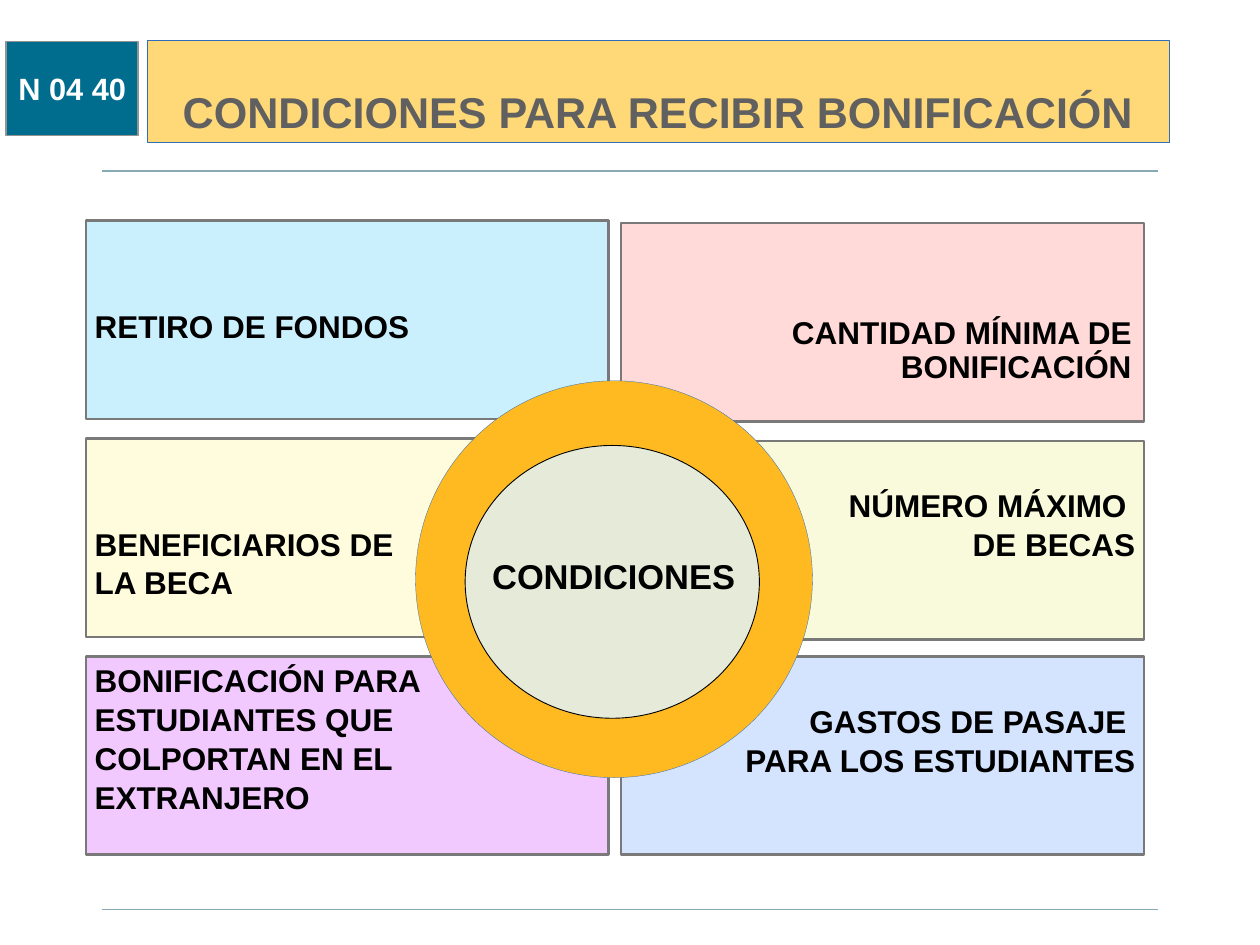
from lxml import etree
from pptx import Presentation
from pptx.dml.color import RGBColor
from pptx.enum.shapes import MSO_CONNECTOR, MSO_SHAPE
from pptx.enum.text import MSO_ANCHOR, PP_ALIGN
from pptx.oxml.ns import qn
from pptx.util import Inches, Pt

RECT, OVAL, STRAIGHT = MSO_SHAPE.RECTANGLE, MSO_SHAPE.OVAL, MSO_CONNECTOR.STRAIGHT
LEFT, CENTER, RIGHT = PP_ALIGN.LEFT, PP_ALIGN.CENTER, PP_ALIGN.RIGHT
TOP, MIDDLE, BOTTOM = MSO_ANCHOR.TOP, MSO_ANCHOR.MIDDLE, MSO_ANCHOR.BOTTOM

COLORS = {
    "rule": "87AAB4", "title": "FFD877", "title_text": "606060", "edge": "2F6EBA",
    "card_edge": "797979", "badge": "006D8F", "badge_edge": "929292",
    "ring": "FFBA22", "core": "E5EAD9", "black": "000000", "white": "FFFFFF",
    "sky": "CAF0FE", "cream": "FEFCDD", "lilac": "F1C9FE",
    "rose": "FFDAD8", "lime": "F8FADB", "blue": "D4E3FE",
}
CARD = {"x": 6.82, "y": 23.34, "dx": 42.48, "dy": 23.06, "w": 41.49, "h": 20.99}
BLANK_LINE = 0.46

# column, row, drop, fill, blank lines above, inset, paragraphs
CARDS = [
    (1, 0, 0.28, "rose", 2, 0.14, ["CANTIDAD MÍNIMA DE BONIFICACIÓN"]),
    (0, 0, 0, "sky", 2, 0.1, ["RETIRO DE FONDOS"]),
    (0, 2, 0, "lilac", 0, 0.1, ["BONIFICACIÓN PARA", "ESTUDIANTES QUE",
                                "COLPORTAN EN EL", "EXTRANJERO"]),
    (0, 1, 0, "cream", 2, 0.1, ["BENEFICIARIOS DE", "LA BECA"]),
    (1, 2, 0, "blue", 1, 0.1, ["GASTOS DE PASAJE ", "PARA LOS ESTUDIANTES"]),
    (1, 1, 0.28, "lime", 1, 0.1, ["NÚMERO MÁXIMO ", "DE BECAS"]),
]


class Deck:
    """Draw styled elements on one slide, with lengths in percent of its size."""

    def __init__(self, width, height):
        self.prs = Presentation()
        self.prs.slide_width, self.prs.slide_height = Inches(width), Inches(height)
        self.s = self.prs.slides.add_slide(self.prs.slide_layouts[6])
        self.font = {"name": "Arial", "bold": True}

    def box(self, x, y, w, h):
        """Turn percentages into slide lengths."""
        across, down = self.prs.slide_width / 100, self.prs.slide_height / 100
        return [round(n) for n in (x * across, y * down, w * across, h * down)]

    def rule(self, x, y, w):
        """Draw a horizontal rule."""
        left, top, width, _ = self.box(x, y, w, 0)
        line = self.s.shapes.add_connector(STRAIGHT, left, top, left + width, top)
        line.line.color.rgb = RGBColor.from_string(COLORS["rule"])
        line.line.width = Pt(1.42)
        etree.SubElement(line._element.spPr, qn("a:effectLst"))

    def shape(self, kind, at, fill, edge, weight):
        """Draw a filled and outlined preset shape."""
        sp = self.s.shapes.add_shape(kind, *self.box(*at))
        sp.shadow.inherit = False
        sp.fill.solid()
        sp.fill.fore_color.rgb = RGBColor.from_string(COLORS[fill])
        sp.line.color.rgb = RGBColor.from_string(COLORS[edge])
        sp.line.width = Pt(weight)
        return sp

    def label(self, at):
        """Add an empty text box."""
        return self.s.shapes.add_textbox(*self.box(*at))

    def text(self, sp, lines, size, color="black", anchor=MIDDLE, inset=0,
             extra_top=0, **layout):
        """Write paragraphs into a shape."""
        tf = sp.text_frame
        margins = {f"margin_{side}": Inches(inset) for side in ("left", "right", "bottom")}
        frame = {"word_wrap": True, "vertical_anchor": anchor,
                 "margin_top": Inches(inset + extra_top), **margins}
        for name, value in frame.items():
            setattr(tf, name, value)
        for i, line in enumerate(lines):
            p = tf.add_paragraph() if i else tf.paragraphs[0]
            for name, value in {"alignment": CENTER, **layout}.items():
                setattr(p, name, value)
            r = p.add_run()
            r.text = line
            for name, value in {**self.font, "size": Pt(size)}.items():
                setattr(r.font, name, value)
            r.font.color.rgb = RGBColor.from_string(COLORS[color])

    def card(self, column, row, drop, fill, blanks, inset, lines):
        """Draw one condition card at its grid cell."""
        at = (CARD["x"] + column * CARD["dx"], CARD["y"] + row * CARD["dy"] + drop,
              CARD["w"], CARD["h"])
        sp = self.shape(RECT, at, fill, "card_edge", 2)
        self.text(sp, lines, 25.6, anchor=TOP, inset=inset,
                  extra_top=blanks * BLANK_LINE, alignment=(LEFT, RIGHT)[column],
                  line_spacing=0.9, space_before=Pt(4))


def main():
    """Build and save the slide."""
    deck = Deck(14.22, 10.67)
    for y in (96.25, 18.09):
        deck.rule(8.09, y, 83.82)
    title = deck.shape(RECT, (11.67, 4.31, 81.15, 10.78), "title", "edge", 0.75)
    deck.text(title, ["CONDICIONES PARA RECIBIR BONIFICACIÓN"], 35, "title_text",
              BOTTOM, 0.06)
    for card in CARDS:
        deck.card(*card)
    deck.shape(OVAL, (32.98, 40.3, 31.5, 41.99), "ring", "edge", 0.25)
    deck.shape(OVAL, (36.92, 47.14, 23.35, 28.87), "core", "black", 0.75)
    center = deck.label((37.76, 57.73, 21.87, 6.94))
    deck.text(center, ["CONDICIONES"], 28, inset=0.02, line_spacing=0.9)
    badge = deck.shape(RECT, (0.49, 4.4, 10.48, 9.93), "badge", "badge_edge", 1.25)
    deck.text(badge, ["N 04 40"], 25, "white")
    deck.prs.save("out.pptx")


if __name__ == "__main__":
    main()
